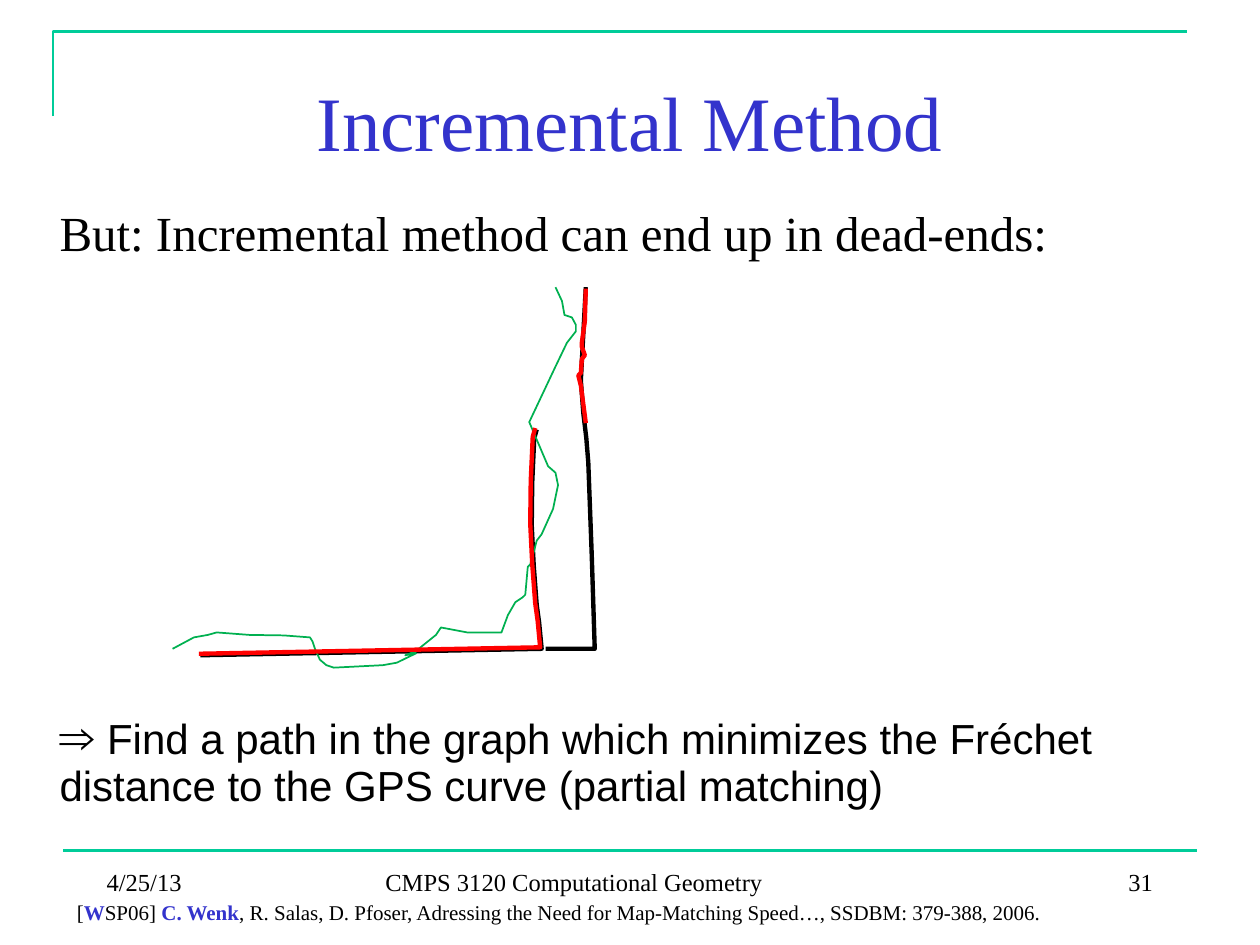
from dataclasses import dataclass

from lxml.etree import SubElement
from pptx import Presentation
from pptx.dml.color import RGBColor as Rgb
from pptx.enum.shapes import MSO_CONNECTOR as Connector
from pptx.enum.text import MSO_ANCHOR as Anchor, MSO_AUTO_SIZE as AutoSize, PP_ALIGN as Align
from pptx.oxml.ns import qn
from pptx.util import Cm, Pt


@dataclass(frozen=True)
class Theme:
    serif: str = "Times New Roman"
    sans: str = "Arial"
    black: Rgb = Rgb(0, 0, 0)
    blue: Rgb = Rgb(0x33, 0x33, 0xCC)
    teal: Rgb = Rgb(0, 0xCC, 0x99)
    green: Rgb = Rgb(0, 0xB0, 0x50)
    red: Rgb = Rgb(0xFF, 0, 0)
    title: int = 44
    body: int = 28
    conclusion: int = 24
    footer: int = 14
    citation: int = 12
    rule: float = 1.5
    road: float = 2.5
    track: float = 1


class SlideBuilder:
    def __init__(self, slide, theme):
        self.slide = slide
        self.theme = theme

    def place(self, shape, left, top, width, height):
        shape.left, shape.top = Cm(left), Cm(top)
        shape.width, shape.height = Cm(width), Cm(height)

    def style_run(self, run, size, color=None, font=None, bold=False):
        run.font.size = Pt(size)
        run.font.name = font or self.theme.serif
        run.font.color.rgb = color or self.theme.black
        run.font.bold = bold

    def add_run(self, paragraph, text, size, **style):
        run = paragraph.add_run()
        run.text = text
        self.style_run(run, size, **style)

    def title(self, text, box):
        shape = self.slide.shapes.title
        self.place(shape, *box)
        frame = shape.text_frame
        frame.text = text
        frame.vertical_anchor = Anchor.MIDDLE
        frame.paragraphs[0].alignment = Align.CENTER
        self.style_run(frame.paragraphs[0].runs[0], self.theme.title, self.theme.blue)

    def body(self, paragraphs, box, inset):
        """Each paragraph is (space before in points, [(text, size, font)])."""
        shape = self.slide.placeholders[1]
        self.place(shape, *box)
        frame = shape.text_frame
        frame.auto_size = AutoSize.NONE
        frame.margin_left = Cm(inset)
        for index, (space, runs) in enumerate(paragraphs):
            paragraph = frame.add_paragraph() if index else frame.paragraphs[0]
            paragraph.line_spacing = 0.9
            paragraph.space_before = Pt(space)
            properties = paragraph._p.get_or_add_pPr()
            properties.set("marL", "0")
            properties.set("indent", "0")
            SubElement(properties, qn("a:buNone"))
            for text, size, font in runs:
                self.add_run(paragraph, text, size, font=font)

    def text_box(self, box):
        shape = self.slide.shapes.add_textbox(*map(Cm, box))
        shape.text_frame.word_wrap = True
        return shape.text_frame

    def footer(self, text, box, align=Align.LEFT):
        paragraph = self.text_box(box).paragraphs[0]
        paragraph.text = text
        paragraph.alignment = align
        self.style_run(paragraph.runs[0], self.theme.footer)

    def citation(self, parts, box):
        """Each part is (text, highlighted)."""
        frame = self.text_box(box)
        frame.margin_left = frame.margin_right = Cm(0.1)
        frame.margin_top = frame.margin_bottom = Cm(0.1)
        paragraph = frame.paragraphs[0]
        paragraph.line_spacing = 0.6
        paragraph.space_before = Pt(6)
        for text, highlighted in parts:
            color = self.theme.blue if highlighted else self.theme.black
            self.add_run(paragraph, text, self.theme.citation, color=color, bold=highlighted)

    def rule(self, start, end):
        line = self.slide.shapes.add_connector(Connector.STRAIGHT, *map(Cm, start + end))
        line.line.color.rgb = self.theme.teal
        line.line.width = Pt(self.theme.rule)
        SubElement(line._element.spPr, qn("a:effectLst"))

    def curve(self, points, color, width, shift=0):
        first, *rest = [(Cm(x + shift), Cm(y + shift)) for x, y in points]
        builder = self.slide.shapes.build_freeform(*first)
        builder.add_line_segments(rest, close=False)
        shape = builder.convert_to_shape()
        shape.shadow.inherit = False
        shape.fill.background()
        shape.line.color.rgb = color
        shape.line.width = Pt(width)


# Map geometry in centimetres
DEAD_END_ROAD = [
    (4.04, 13.21), (10.92, 13.08), (10.87, 12.55), (10.82, 12.19), (10.76, 11.4),
    (10.72, 10.59), (10.73, 9.73), (10.77, 8.84), (10.82, 8.66),
]
THROUGH_ROAD = [
    (11, 13.08), (11.99, 13.08), (11.93, 11.2), (11.86, 9.32), (11.82, 8.83),
    (11.76, 8.33), (11.71, 7.67), (11.81, 5.79),
]
GPS_TRACK = [
    (3.48, 13.08), (3.91, 12.85), (4.19, 12.8), (4.37, 12.75), (5.03, 12.8),
    (5.72, 12.81), (6.25, 12.85), (6.3, 12.93), (6.35, 13.08), (6.45, 13.3),
    (6.58, 13.41), (6.73, 13.46), (7.72, 13.41), (8, 13.36), (8.39, 13.17),
    (8.17, 13.21), (8.38, 13.13), (8.79, 12.8), (8.89, 12.65), (9.42, 12.75),
    (10.11, 12.75), (10.24, 12.4), (10.39, 12.14), (10.54, 12.04), (10.59, 11.99),
    (10.64, 11.43), (10.69, 11.38), (10.77, 11.1), (10.82, 10.9), (10.92, 10.77),
    (11.15, 10.26), (11.25, 9.78), (11.2, 9.53), (11.05, 9.4), (10.67, 8.51),
    (11.2, 7.39), (11.43, 6.91), (11.61, 6.68), (11.61, 6.55), (11.53, 6.4),
    (11.38, 6.35), (11.33, 6.07), (11.2, 5.79),
]
THROUGH_MATCH = [
    (11.81, 8.53), (11.71, 7.77), (11.66, 7.57), (11.71, 7.52), (11.73, 7.24),
    (11.79, 7.16), (11.73, 6.99), (11.73, 6.91), (11.79, 6.48), (11.81, 5.82),
]


def main():
    presentation = Presentation()
    presentation.slide_width, presentation.slide_height = Cm(25.4), Cm(19.05)
    slide = presentation.slides.add_slide(presentation.slide_layouts[1])
    theme = Theme()
    builder = SlideBuilder(slide, theme)

    # Frame lines
    builder.curve([(1.07, 2.34), (1.07, 0.64), (23.93, 0.64)], theme.teal, theme.rule)
    builder.rule((1.27, 17.15), (24.13, 17.15))

    # Title and statements above and below the map
    builder.title("Incremental Method", (1.9, 0.84, 21.6, 3.18))
    builder.body([
        (5.6, [("But: Incremental method can end up in dead-ends:", theme.body, theme.serif)]),
        (257, [
            ("⇒ ", theme.body, theme.serif),
            ("Find a path in the graph which minimizes the Fréchet distance "
             "to the GPS curve (partial matching)", theme.conclusion, theme.sans),
        ]),
    ], (0, 4.09, 24.56, 11.76), inset=1.2)

    # Roads, GPS track and matched path
    builder.curve(DEAD_END_ROAD, theme.black, theme.road)
    builder.curve(THROUGH_ROAD, theme.black, theme.road)
    builder.curve(GPS_TRACK, theme.green, theme.track)
    builder.curve(DEAD_END_ROAD, theme.red, theme.road, shift=-0.03)
    builder.curve(THROUGH_MATCH, theme.red, theme.road)

    # Citation and footer
    builder.citation([
        ("[", False), ("W", True), ("SP06] ", False), ("C. Wenk", True),
        (", R. Salas, D. Pfoser, Adressing the Need for Map-Matching Speed…, "
         "SSDBM: 379-388, 2006.", False),
    ], (1.45, 18.21, 21.87, 0.53))
    builder.footer("4/25/13", (1.9, 17.35, 5.28, 1.27))
    builder.footer("CMPS 3120 Computational Geometry", (7.52, 17.35, 10.08, 1.27))
    builder.footer("31", (18.21, 17.35, 5.28, 1.27), Align.RIGHT)

    presentation.save("out.pptx")


if __name__ == "__main__":
    main()
